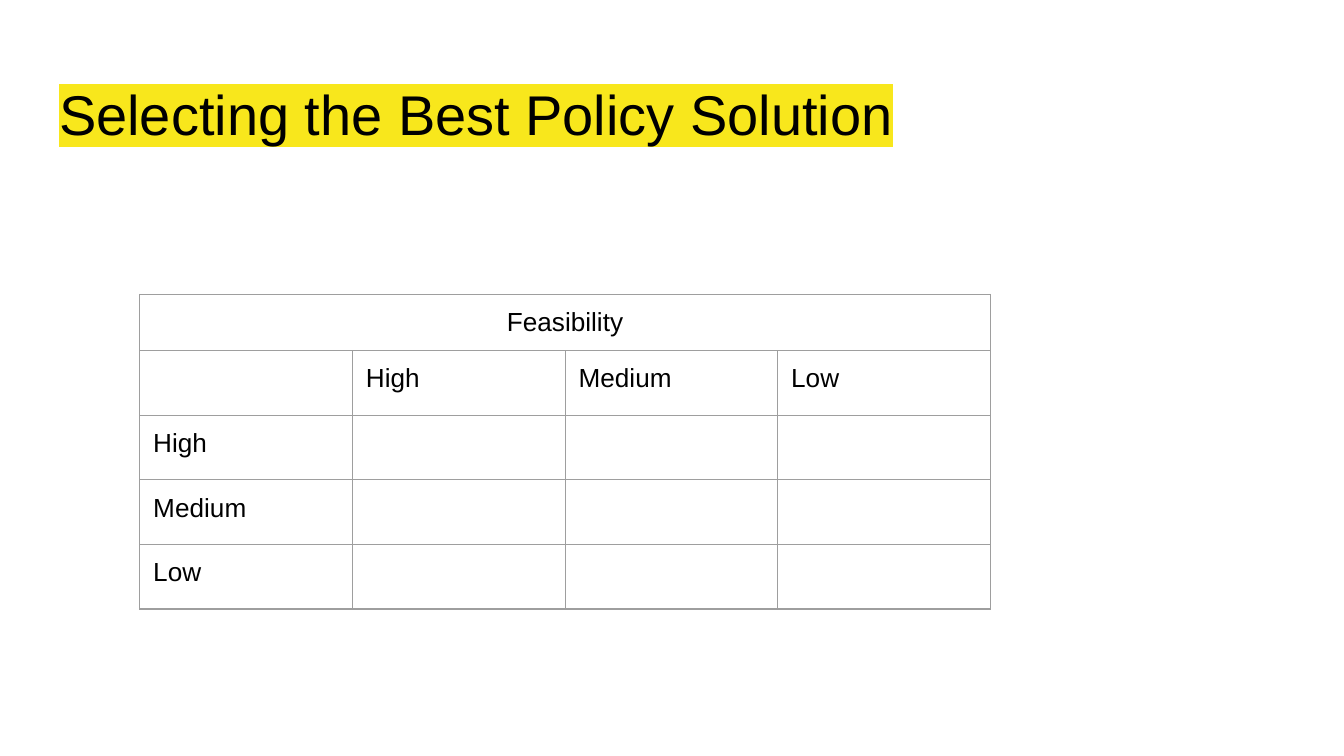
"""Build a slide with a feasibility matrix for selecting a policy solution."""
from dataclasses import dataclass

import lxml.etree
import pptx
import pptx.dml.color
import pptx.enum.text
import pptx.oxml.ns
import pptx.util

Inches = pptx.util.Inches
Pt = pptx.util.Pt
RGBColor = pptx.dml.color.RGBColor
qn = pptx.oxml.ns.qn

BLACK = RGBColor(0x00, 0x00, 0x00)
YELLOW = RGBColor(0xF8, 0xE7, 0x1C)
GREY = RGBColor(0x9E, 0x9E, 0x9E)
FONT = "Arial"
INSET = Inches(0.1)
LEVELS = ("High", "Medium", "Low")


@dataclass
class Label:
    row: int
    col: int
    text: str
    align: pptx.enum.text.PP_ALIGN = pptx.enum.text.PP_ALIGN.LEFT


def add_run(p, text: str, size: float):
    r = p.add_run()
    r.text = text
    r.font.name = FONT
    r.font.size = Pt(size)
    r.font.color.rgb = BLACK
    return r


def highlight(r, color: RGBColor) -> None:
    mark = lxml.etree.Element(qn("a:highlight"))
    lxml.etree.SubElement(mark, qn("a:srgbClr"), val=str(color))
    r._r.rPr.find(qn("a:solidFill")).addnext(mark)


def format_cell(cell) -> None:
    cell.margin_left = cell.margin_right = INSET
    cell.margin_top = cell.margin_bottom = INSET
    tcPr = cell._tc.get_or_add_tcPr()
    for side in ("a:lnL", "a:lnR", "a:lnT", "a:lnB"):
        ln = lxml.etree.SubElement(tcPr, qn(side), w=str(Pt(0.75)))
        fill = lxml.etree.SubElement(ln, qn("a:solidFill"))
        lxml.etree.SubElement(fill, qn("a:srgbClr"), val=str(GREY))
    cell.fill.background()


def set_empty_font(cell) -> None:
    p = cell.text_frame.paragraphs[0]
    end = lxml.etree.SubElement(p._p, qn("a:endParaRPr"), sz="1800")
    lxml.etree.SubElement(end, qn("a:latin"), typeface=FONT)


def add_title(s, text: str) -> None:
    sp = s.shapes.title
    sp.left, sp.top = Inches(0.34), Inches(0.49)
    sp.width, sp.height = Inches(9.32), Inches(0.63)
    tf = sp.text_frame
    tf.word_wrap = True
    tf.auto_size = pptx.enum.text.MSO_AUTO_SIZE.NONE
    tf.vertical_anchor = pptx.enum.text.MSO_ANCHOR.TOP
    tf.margin_left = tf.margin_right = tf.margin_top = tf.margin_bottom = INSET
    p = tf.paragraphs[0]
    p.alignment = pptx.enum.text.PP_ALIGN.LEFT
    highlight(add_run(p, text, 30), YELLOW)


def add_matrix(s, labels: list[Label]) -> None:
    rows, cols = len(LEVELS) + 2, len(LEVELS) + 1
    table = s.shapes.add_table(
        rows, cols, Inches(1.04), Inches(2.19),
        Inches(6.33), Inches(0.42) * rows,
    ).table
    table.first_row = table.horz_banding = False
    for cell in table.iter_cells():
        format_cell(cell)
    table.cell(0, 0).merge(table.cell(0, cols - 1))
    for label in labels:
        p = table.cell(label.row, label.col).text_frame.paragraphs[0]
        p.alignment = label.align
        add_run(p, label.text, 14)
    for cell in table.iter_cells():
        if not cell.text and not cell.is_spanned:
            set_empty_font(cell)


def main() -> None:
    prs = pptx.Presentation()
    prs.slide_width = Inches(10)
    prs.slide_height = prs.slide_width * 9 // 16
    s = prs.slides.add_slide(prs.slide_layouts[5])
    add_title(s, "Selecting the Best Policy Solution")
    labels = [Label(0, 0, "Feasibility", pptx.enum.text.PP_ALIGN.CENTER)]
    for i, level in enumerate(LEVELS):
        labels += [Label(1, i + 1, level), Label(i + 2, 0, level)]
    add_matrix(s, labels)
    prs.save("out.pptx")


if __name__ == "__main__":
    main()
